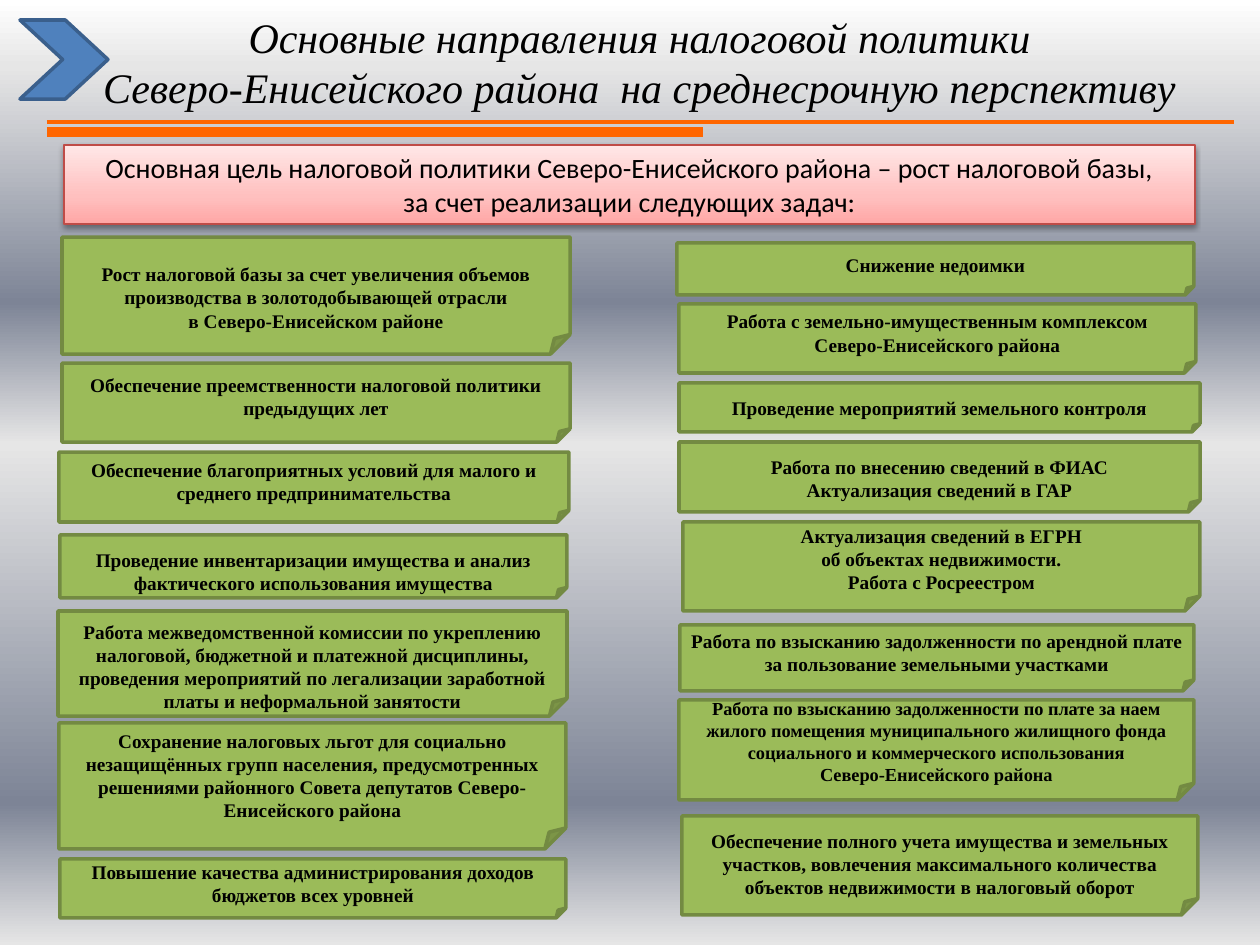
from lxml import etree
from pptx import Presentation
from pptx.dml.color import RGBColor
from pptx.enum.shapes import MSO_CONNECTOR, MSO_SHAPE
from pptx.enum.text import MSO_ANCHOR, PP_ALIGN
from pptx.oxml.ns import qn
from pptx.util import Inches, Pt

PX = 914400 / 126  # EMU in one px
TOP, MIDDLE = MSO_ANCHOR.TOP, MSO_ANCHOR.MIDDLE
CENTER = PP_ALIGN.CENTER
NOTE, CHEVRON, RECT = MSO_SHAPE.FOLDED_CORNER, MSO_SHAPE.CHEVRON, MSO_SHAPE.RECTANGLE
STRAIGHT = MSO_CONNECTOR.STRAIGHT

BLACK = RGBColor(0x00, 0x00, 0x00)
ORANGE = RGBColor(0xFF, 0x66, 0x00)
GREEN = RGBColor(0x9B, 0xBB, 0x59)
DARK_GREEN = RGBColor(0x73, 0x8A, 0x42)
BLUE = RGBColor(0x4F, 0x81, 0xBD)
DARK_BLUE = RGBColor(0x3A, 0x5F, 0x8C)
RED = RGBColor(0xBF, 0x4C, 0x48)
SKY = [(0, "FFFFFF"), (7, "E6E6E6"), (32, "7D8496"), (47, "E6E6E6"),
       (85, "7D8496"), (100, "E6E6E6")]
PINK = [(0, "FFA6A5"), (35, "FFC0BF"), (100, "FFE7E7")]

TITLE_FONT = dict(name="Times New Roman", size=Pt(24), italic=True)
GOAL_FONT = dict(name="Calibri", size=Pt(16))
NOTE_FONT = dict(name="Times New Roman", size=Pt(11), bold=True)

TITLE = ["Основные направления налоговой политики",
         "Северо-Енисейского района  на среднесрочную перспективу"]
GOAL = ["Основная цель налоговой политики Северо-Енисейского района – рост налоговой базы,",
        "за счет реализации следующих задач:"]

# Lines: left, right, y in px, weight in pt
RULES = [(47, 703, 132, 6), (47, 1234, 122, 2.25)]

# Tasks: left, top, width, height in px, lines, then special settings
TASKS = [
    # Left column
    (62, 237, 508, 117,
     ["Рост налоговой базы за счет увеличения объемов производства в золотодобывающей отрасли",
      "в Северо-Енисейском районе"], dict(side=13, lower=23)),
    (62, 363, 508, 79,
     ["Обеспечение преемственности налоговой политики предыдущих лет"], {}),
    (59, 452, 510, 70,
     ["Обеспечение благоприятных условий для малого и среднего предпринимательства"], {}),
    (60, 535, 507, 63,
     ["Проведение инвентаризации имущества и анализ фактического использования имущества"],
     dict(anchor=TOP)),
    (58, 611, 509, 105,
     ["Работа межведомственной комиссии по укреплению налоговой, бюджетной и платежной "
      "дисциплины, проведения мероприятий по легализации заработной платы и неформальной "
      "занятости"], dict(lower=23)),
    (59, 723, 507, 126,
     ["Сохранение налоговых льгот для социально незащищённых групп населения, "
      "предусмотренных решениями районного Совета депутатов Северо-Енисейского района"], {}),
    (60, 859, 506, 59,
     ["Повышение качества администрирования доходов бюджетов всех уровней"], {}),
    # Right column
    (677, 243, 517, 52, ["Снижение недоимки"], {}),
    (679, 304, 517, 69,
     ["Работа с земельно-имущественным комплексом", "Северо-Енисейского района"], {}),
    (679, 383, 521, 49,
     ["Проведение мероприятий земельного контроля"], dict(anchor=TOP)),
    (679, 442, 521, 70,
     ["Работа по внесению сведений в ФИАС", "Актуализация сведений в ГАР"],
     dict(anchor=TOP)),
    (683, 522, 517, 89,
     ["Актуализация сведений в ЕГРН", "об объектах недвижимости.",
      "Работа с Росреестром"], {}),
    (680, 625, 514, 66,
     ["Работа по взысканию задолженности по арендной плате за пользование земельными "
      "участками"], {}),
    (679, 700, 515, 100,
     ["Работа по взысканию задолженности по плате за наем жилого помещения муниципального "
      "жилищного фонда социального и коммерческого использования",
      "Северо-Енисейского района"], dict(size=10.5)),
    (682, 816, 516, 99,
     ["Обеспечение полного учета имущества и земельных участков, вовлечения максимального "
      "количества объектов недвижимости в налоговый оборот"], dict(anchor=TOP)),
]


def px(*values):
    return [round(v * PX) for v in values]


def set_gradient(fill, parent, stops, angle):
    fill.gradient()
    grad = next(parent.iter(qn("a:gradFill")))
    gs_list = grad.find(qn("a:gsLst"))
    for gs in list(gs_list):
        gs_list.remove(gs)
    for pos, color in stops:
        gs = etree.SubElement(gs_list, qn("a:gs"), pos=str(pos * 1000))
        etree.SubElement(gs, qn("a:srgbClr"), val=color)
    grad.find(qn("a:lin")).set("ang", str(angle * 60000))


def write(shape, lines, font, anchor=MIDDLE, insets=(13, 6, 13, 6)):
    tf = shape.text_frame
    tf.word_wrap = True
    tf.vertical_anchor = anchor
    tf.margin_left, tf.margin_top, tf.margin_right, tf.margin_bottom = px(*insets)
    for i, text in enumerate(lines):
        p = tf.paragraphs[0] if i == 0 else tf.add_paragraph()
        p.alignment = CENTER
        r = p.add_run()
        r.text = text
        r.font.color.rgb = BLACK
        for key, value in font.items():
            setattr(r.font, key, value)


def add_box(kind, box, fill, line, weight):
    sp = s.shapes.add_shape(kind, *px(*box))
    sp.shadow.inherit = False
    if fill is not None:
        sp.fill.solid()
        sp.fill.fore_color.rgb = fill
    sp.line.color.rgb = line
    sp.line.width = Pt(weight)
    return sp


prs = Presentation()
prs.slide_width, prs.slide_height = Inches(10), Inches(7.5)
s = prs.slides.add_slide(prs.slide_layouts[6])
set_gradient(s.background.fill, s.element, SKY, 90)

# Title and the two rules below it
write(s.shapes.add_textbox(*px(34, 17, 1211, 90)), TITLE, TITLE_FONT)
for left, right, y, weight in RULES:
    rule = s.shapes.add_connector(STRAIGHT, *px(left, y, right, y))
    rule.line.color.rgb = ORANGE
    rule.line.width = Pt(weight)
    etree.SubElement(rule.element.spPr, qn("a:effectLst"))

# Task notes
for *box, lines, special in TASKS:
    sp = add_box(NOTE, box, GREEN, DARK_GREEN, 2)
    side = special.get("side", 3)
    edge = 6 if side > 3 else 13
    font = {**NOTE_FONT, "size": Pt(special.get("size", 11))}
    write(sp, lines, font, special.get("anchor", MIDDLE),
          (side, edge + special.get("lower", 0), side, edge))

# Chevron
chevron = add_box(CHEVRON, (20, 20, 88, 79), BLUE, DARK_BLUE, 2)
chevron.adjustments[0] = 0.54

# Goal banner with a soft shadow
goal = add_box(RECT, (64, 145, 1131, 79), None, RED, 0.75)
set_gradient(goal.fill, goal.element, PINK, 270)
effects = goal.element.spPr.find(qn("a:effectLst"))
shadow = etree.SubElement(effects, qn("a:outerShdw"), blurRad=str(Pt(3.1)),
                          dist=str(Pt(1.6)), dir="5400000", rotWithShape="0")
color = etree.SubElement(shadow, qn("a:srgbClr"), val="000000")
etree.SubElement(color, qn("a:alpha"), val="38000")
write(goal, GOAL, GOAL_FONT)

prs.save("out.pptx")
